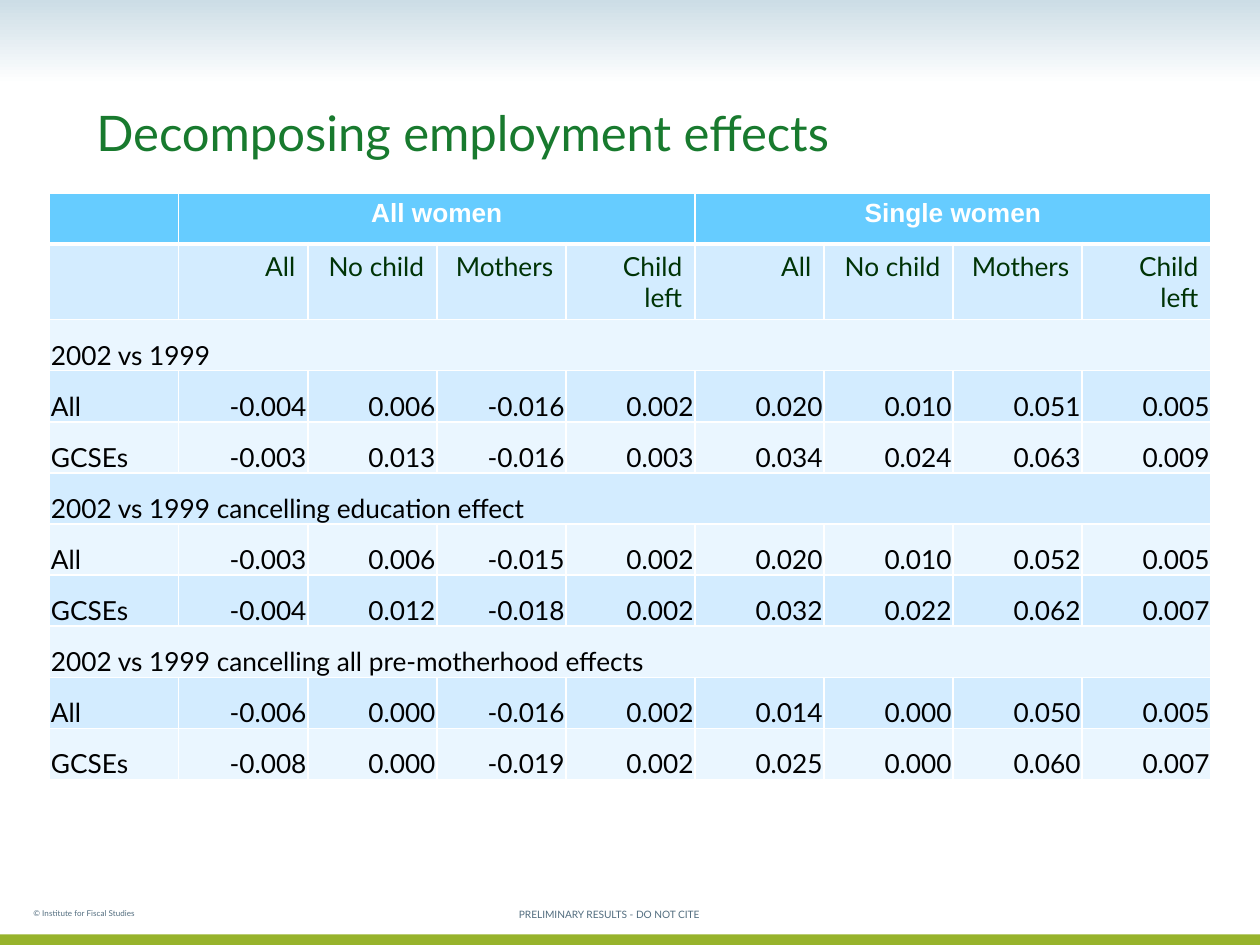
"""Build the slide with the table that decomposes employment effects."""
from lxml.etree import SubElement
from pptx import Presentation
from pptx.dml.color import RGBColor
from pptx.enum.shapes import MSO_SHAPE
from pptx.enum.text import MSO_ANCHOR, PP_ALIGN
from pptx.oxml.ns import qn
from pptx.util import Pt

WHITE = RGBColor(0xFF, 0xFF, 0xFF)
BLACK = RGBColor(0x00, 0x00, 0x00)
MIST = RGBColor(0xCC, 0xDD, 0xE6)
LIME = RGBColor(0x97, 0xB3, 0x2C)
GREEN = RGBColor(0x18, 0x7A, 0x2E)
DARK_GREEN = RGBColor(0x00, 0x33, 0x06)
SLATE = RGBColor(0x52, 0x6D, 0x7F)
SKY = RGBColor(0x66, 0xCC, 0xFF)
BANDS = (RGBColor(0xEA, 0xF6, 0xFF), RGBColor(0xD3, 0xEC, 0xFF))

GROUPS = ("All women", "Single women")
MEASURES = ("All", "No child", "Mothers", "Child left")
ROWS = (
    ("2002 vs 1999",),
    ("All", "-0.004", "0.006", "-0.016", "0.002", "0.020", "0.010", "0.051", "0.005"),
    ("GCSEs", "-0.003", "0.013", "-0.016", "0.003", "0.034", "0.024", "0.063", "0.009"),
    ("2002 vs 1999 cancelling education effect",),
    ("All", "-0.003", "0.006", "-0.015", "0.002", "0.020", "0.010", "0.052", "0.005"),
    ("GCSEs", "-0.004", "0.012", "-0.018", "0.002", "0.032", "0.022", "0.062", "0.007"),
    ("2002 vs 1999 cancelling all pre-motherhood effects",),
    ("All", "-0.006", "0.000", "-0.016", "0.002", "0.014", "0.000", "0.050", "0.005"),
    ("GCSEs", "-0.008", "0.000", "-0.019", "0.002", "0.025", "0.000", "0.060", "0.007"),
)
COLUMN_COUNT = 1 + len(GROUPS) * len(MEASURES)
COLUMN_WIDTH = 73.75
ROW_HEIGHT = 29.2
MEASURE_ROW_HEIGHT = 43.2

GROUP_FONT = {"name": "Arial", "size": Pt(15), "bold": True}
BODY_FONT = {"name": "Lato", "size": Pt(15), "bold": False}
TIGHT_CELL = {
    "margin_left": Pt(0.75), "margin_right": Pt(0.75), "margin_top": Pt(0.75),
    "margin_bottom": Pt(0), "vertical_anchor": MSO_ANCHOR.BOTTOM,
}


def set_values(target, values):
    """Set every attribute named in a dict of format values."""
    for name, value in values.items():
        setattr(target, name, value)


def write(frame, text, font, color, align=PP_ALIGN.LEFT):
    """Write one formatted paragraph and return its paragraph and span."""
    paragraph = frame.paragraphs[0]
    paragraph.alignment = align
    span = paragraph.add_run()
    span.text = text
    set_values(span.font, font)
    span.font.color.rgb = color
    return paragraph, span


def add_band(page, top, height):
    """Add a full-width bar without line or shadow."""
    band = page.shapes.add_shape(MSO_SHAPE.RECTANGLE, Pt(0), Pt(top), Pt(720), Pt(height))
    band.shadow.inherit = False
    band.line.fill.background()
    return band


def add_text(page, bounds, text, size, color, anchor, align=PP_ALIGN.LEFT):
    """Add a wrapping text box and return its paragraph and span."""
    box = page.shapes.add_textbox(*map(Pt, bounds))
    set_values(box.text_frame, {"word_wrap": True, "vertical_anchor": anchor})
    return write(box.text_frame, text, {"name": "Lato", "size": Pt(size)}, color, align)


def add_footer(page, bounds, text, size, anchor, align=PP_ALIGN.LEFT):
    """Add a footer text set as a subscript."""
    paragraph, span = add_text(page, bounds, text, size, SLATE, anchor, align)
    span.font._element.set("baseline", "-25000")


def style_cell(cell, fill, bottom_width):
    """Give a cell white borders and a solid fill."""
    properties = cell._tc.get_or_add_tcPr()
    for side, width in (("L", 1), ("R", 1), ("T", 1), ("B", bottom_width)):
        line = SubElement(properties, qn(f"a:ln{side}"), w=str(Pt(width)))
        solid = SubElement(line, qn("a:solidFill"))
        SubElement(solid, qn("a:srgbClr"), val=str(WHITE))
    cell.fill.solid()
    cell.fill.fore_color.rgb = fill


def fill_headers(table):
    """Write the group headers and the measure names below them."""
    for group_index, group in enumerate(GROUPS):
        first = 1 + group_index * len(MEASURES)
        header = table.cell(0, first)
        header.merge(table.cell(0, first + len(MEASURES) - 1))
        write(header.text_frame, group, GROUP_FONT, WHITE, PP_ALIGN.CENTER)
        for column, measure in enumerate(MEASURES, first):
            frame = table.cell(1, column).text_frame
            write(frame, measure, BODY_FONT, DARK_GREEN, PP_ALIGN.RIGHT)


def fill_body(table):
    """Write the section titles and the rows of values."""
    for row, texts in enumerate(ROWS, 2):
        if len(texts) == 1:
            table.cell(row, 0).merge(table.cell(row, COLUMN_COUNT - 1))
        for column, text in enumerate(texts):
            cell = table.cell(row, column)
            set_values(cell, TIGHT_CELL)
            align = PP_ALIGN.RIGHT if column else PP_ALIGN.LEFT
            write(cell.text_frame, text, BODY_FONT, BLACK, align)


def add_effects_table(page):
    """Add the table of employment effects."""
    row_count = len(ROWS) + 2
    height = ROW_HEIGHT * (row_count - 1) + MEASURE_ROW_HEIGHT
    table = page.shapes.add_table(
        row_count, COLUMN_COUNT, Pt(28.4), Pt(110.2),
        Pt(COLUMN_WIDTH * COLUMN_COUNT), Pt(height)).table
    for column in table.columns:
        column.width = Pt(COLUMN_WIDTH)
    for index, row in enumerate(table.rows):
        row.height = Pt(MEASURE_ROW_HEIGHT if index == 1 else ROW_HEIGHT)
        for cell in row.cells:
            style_cell(cell, BANDS[index % 2] if index else SKY, 1 if index else 3)
    fill_headers(table)
    fill_body(table)


def main():
    """Build and save the deck."""
    deck = Presentation()
    set_values(deck, {"slide_width": Pt(720), "slide_height": Pt(540)})
    page = deck.slides.add_slide(deck.slide_layouts[6])

    top_fill = add_band(page, 0, 48).fill
    top_fill.gradient()
    top_fill.gradient_angle = 270
    for stop, color in zip(top_fill.gradient_stops, (MIST, WHITE)):
        stop.color.rgb = color
    bottom_fill = add_band(page, 534, 6).fill
    bottom_fill.solid()
    bottom_fill.fore_color.rgb = LIME

    add_effects_table(page)
    title, _ = add_text(page, (48, 18, 618, 78), "Decomposing employment effects",
                        28, GREEN, MSO_ANCHOR.BOTTOM)
    title.line_spacing = 0.9
    add_footer(page, (12, 510, 198, 18), "© Institute for Fiscal Studies",
               8, MSO_ANCHOR.TOP)
    add_footer(page, (234, 510, 228, 18), "PRELIMINARY RESULTS - DO NOT CITE",
               10, MSO_ANCHOR.MIDDLE, PP_ALIGN.CENTER)
    deck.save("out.pptx")


if __name__ == "__main__":
    main()
